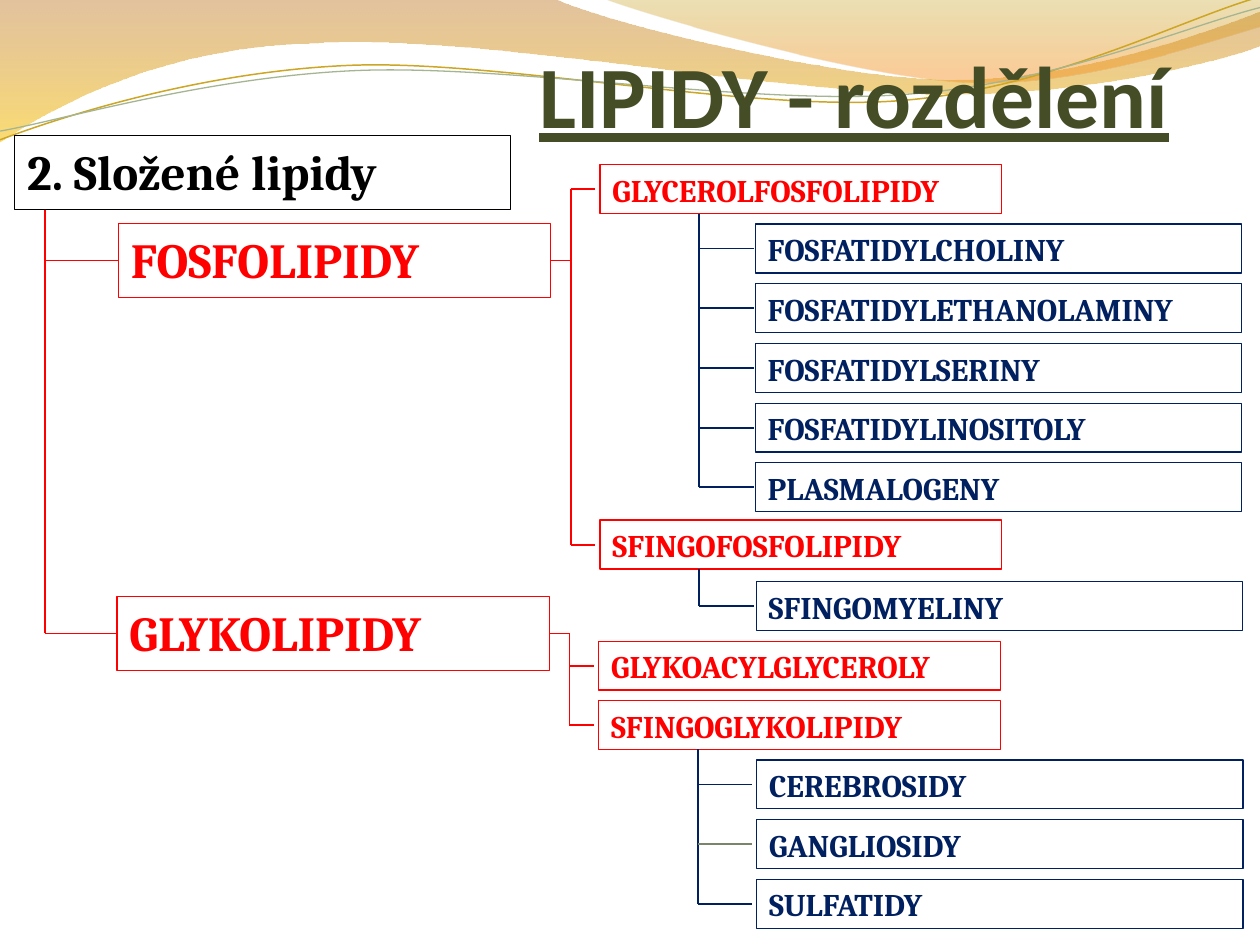
from lxml import etree
from pptx import Presentation
from pptx.dml.color import RGBColor
from pptx.enum.shapes import MSO_CONNECTOR, MSO_SHAPE
from pptx.enum.text import MSO_ANCHOR, PP_ALIGN
from pptx.oxml.ns import qn
from pptx.util import Pt

RECT = MSO_SHAPE.RECTANGLE
LINE = MSO_CONNECTOR.STRAIGHT
TOP, BOTTOM = MSO_ANCHOR.TOP, MSO_ANCHOR.BOTTOM
LEFT = PP_ALIGN.LEFT

BLACK = RGBColor(0x00, 0x00, 0x00)
RED = RGBColor(0xFF, 0x00, 0x00)
NAVY = RGBColor(0x00, 0x20, 0x60)
OLIVE = RGBColor(0x44, 0x4D, 0x26)
GREY = RGBColor(0x7A, 0x86, 0x6C)
GOLD = RGBColor(0xCC, 0xA6, 0x24)
SAGE = RGBColor(0xA5, 0xB5, 0x92)
BROWN = RGBColor(0xC0, 0x7A, 0x28)
YELLOW = RGBColor(0xF7, 0xBF, 0x00)
OCHRE = RGBColor(0xC0, 0x97, 0x09)
ORANGE = RGBColor(0xF5, 0x93, 0x20)

BIG = {"size": Pt(28), "name": "Cambria", "bold": True}
SMALL = {"size": Pt(18), "name": "Cambria", "bold": True}
HEAD = {"size": Pt(50), "name": "Calibri", "bold": True, "underline": True}
BIG_H, SMALL_H = 42.5, 28

# Each part is a list of points: one for a line, three for a curve.
LEFT_BAND = [
    [(-0.7, -0.7)], [(316.8, -0.7)],
    [(342.7, 12.2), (478, 45.4), (545.8, 45.4)],
    [(614.2, 45.4), (689.8, 18.7), (720, 6.5)],
    [(720.7, 25.9)],
    [(707.8, 31.7), (626.4, 54.7), (537.1, 54)],
    [(447.8, 54), (275, 20.2), (185, 24.5)],
    [(92.9, 25.9), (33.1, 59.8), (-0.7, 81.4)],
]
RIGHT_BAND = [
    [(344.9, -0.7)],
    [(366.5, 7.9), (491, 44.6), (553.7, 46.8)],
    [(617, 49.7), (691.9, 23), (720, 15.1)],
    [(720, 0)],
]
GOLD_WAVE = [
    [(0, 79.9)],
    [(34.6, 67), (113.8, 41), (199.4, 37.4)],
    [(284.4, 33.8), (427, 64.1), (513.4, 57.6)],
    [(599.8, 51.1), (675.4, 10.8), (718.6, -1.4)],
]
SAGE_WAVE = [
    [(0, 74.9)],
    [(33.8, 69.1), (118.1, 43.9), (203.8, 40.3)],
    [(290.2, 36.7), (429.8, 60.5), (516.2, 54)],
    [(601.9, 48.2), (677.5, 15.1), (720, 4.3)],
]


def outline(slide, parts, close):
    """Draw a freeform, then join each three points into one curve."""
    start, *rest = [(Pt(x), Pt(y)) for part in parts for x, y in part]
    pen = slide.shapes.build_freeform(*start)
    pen.add_line_segments(rest, close=close)
    shape = pen.convert_to_shape()
    shape.shadow.inherit = False
    legs = iter(list(shape._element.iter(qn("a:lnTo"))))
    for part in parts[1:]:
        first, *others = [next(legs) for _ in part]
        if others:
            first.tag = qn("a:cubicBezTo")
            for leg in others:
                first.append(leg[0])
                leg.getparent().remove(leg)
    return shape


def band(slide, parts, stops):
    """Draw a see-through wave; stops hold place, colour and opacity."""
    shape = outline(slide, parts, True)
    shape.line.fill.background()
    fill = shape.fill
    fill.gradient()
    fill.gradient_angle = 270
    for stop, (place, color, _) in zip(fill.gradient_stops, stops):
        stop.position = place
        stop.color.rgb = color
    for node, (_, _, alpha) in zip(shape._element.iter(qn("a:srgbClr")), stops):
        etree.SubElement(node, qn("a:alpha"), val=str(alpha * 1000))


def wave(slide, parts, color, width):
    shape = outline(slide, parts, False)
    shape.fill.background()
    shape.line.color.rgb = color
    shape.line.width = Pt(width)


def backdrop(slide):
    band(slide, LEFT_BAND, [(0, BROWN, 45), (1, YELLOW, 55)])
    band(slide, RIGHT_BAND, [(0, OCHRE, 30), (0.8, ORANGE, 45)])
    wave(slide, GOLD_WAVE, GOLD, 0.85)
    wave(slide, SAGE_WAVE, SAGE, 0.75)


def write(frame, text, style, color):
    frame.word_wrap = True
    para = frame.paragraphs[0]
    para.alignment = LEFT
    run = para.add_run()
    run.text = text
    for key, value in style.items():
        setattr(run.font, key, value)
    run.font.color.rgb = color


def title(slide, x, y, w, h):
    frame = slide.shapes.add_textbox(Pt(x), Pt(y), Pt(w), Pt(h)).text_frame
    frame.vertical_anchor = BOTTOM
    frame.margin_left = frame.margin_right = frame.margin_bottom = 0
    write(frame, "LIPIDY - rozdělení", HEAD, OLIVE)


def label(slide, box, text, style, color):
    shape = slide.shapes.add_shape(RECT, *map(Pt, box))
    shape.shadow.inherit = False
    shape.fill.background()
    shape.line.color.rgb = color
    shape.line.width = Pt(0.75)
    shape.text_frame.vertical_anchor = TOP
    write(shape.text_frame, text, style, color)


def link(slide, ends, color, width=1):
    line = slide.shapes.add_connector(LINE, *map(Pt, ends))
    line.line.color.rgb = color
    line.line.width = Pt(width)
    etree.SubElement(line._element.spPr, qn("a:effectLst"))


def fork(slide, x, y, rows, reach, color, odd=()):
    """Draw a stem from y to the last row, with a tick at every row."""
    link(slide, (x, y, x, rows[-1]), color)
    for i, row in enumerate(rows):
        tint, width = (GREY, 0.75) if i in odd else (color, 1)
        link(slide, (x, row, x + reach, row), tint, width)


def leaves(slide, x, y, gap, names, odd):
    """List the members of a class below its box, on a stem at x."""
    dx, dy = gap
    tops = [y + dy + 34.1 * i for i in range(len(names))]
    fork(slide, x, y, [t + SMALL_H / 2 for t in tops], 31, NAVY, odd)
    for top, name in zip(tops, names):
        label(slide, (x + dx, top, 278, SMALL_H), name, SMALL, NAVY)


def family(slide, x, y, name, kinds):
    """Draw a family box and its classes.

    Each kind holds its name, top, gap to the members, members, odd ticks.
    """
    mid = y + BIG_H / 2
    label(slide, (x, y, 247, BIG_H), name, BIG, RED)
    stem = x + 258.5
    link(slide, (x + 247, mid, stem, mid), RED)
    rows = [top + SMALL_H / 2 for _, top, *_ in kinds]
    fork(slide, stem, min(mid, rows[0]), rows, 14, RED)
    for kind, top, gap, names, odd in kinds:
        label(slide, (stem + 16.75, top, 229.5, SMALL_H), kind, SMALL, RED)
        if names:
            leaves(slide, stem + 73.5, top + SMALL_H, gap, names, odd)


def chart(slide, x, y):
    label(slide, (x, y, 283.5, BIG_H), "2. Složené lipidy", BIG, BLACK)
    tops = (127.6, 340.75)
    fork(slide, x + 17.25, y + BIG_H, [t + BIG_H / 2 for t in tops], 42, RED)
    phospho = [
        ("GLYCEROLFOSFOLIPIDY", 94.1, (31.9, 6),
         ["FOSFATIDYLCHOLINY", "FOSFATIDYLETHANOLAMINY", "FOSFATIDYLSERINY",
          "FOSFATIDYLINOSITOLY", "PLASMALOGENY"], ()),
        ("SFINGOFOSFOLIPIDY", 297.25, (32.5, 7.25), ["SFINGOMYELINY"], ()),
    ]
    glyco = [
        ("GLYKOACYLGLYCEROLY", 366.4, (0, 0), [], ()),
        ("SFINGOGLYKOLIPIDY", 400.25, (33.5, 6),
         ["CEREBROSIDY", "GANGLIOSIDY", "SULFATIDY"], (1,)),
    ]
    family(slide, x + 59.25, tops[0], "FOSFOLIPIDY", phospho)
    family(slide, x + 58.5, tops[1], "GLYKOLIPIDY", glyco)


def main():
    deck = Presentation()
    deck.slide_width, deck.slide_height = Pt(720), Pt(540)
    slide = deck.slides.add_slide(deck.slide_layouts[6])
    backdrop(slide)
    title(slide, 308.25, 15, 386.5, 68.5)
    chart(slide, 8.4, 77.4)
    deck.save("out.pptx")


if __name__ == "__main__":
    main()
